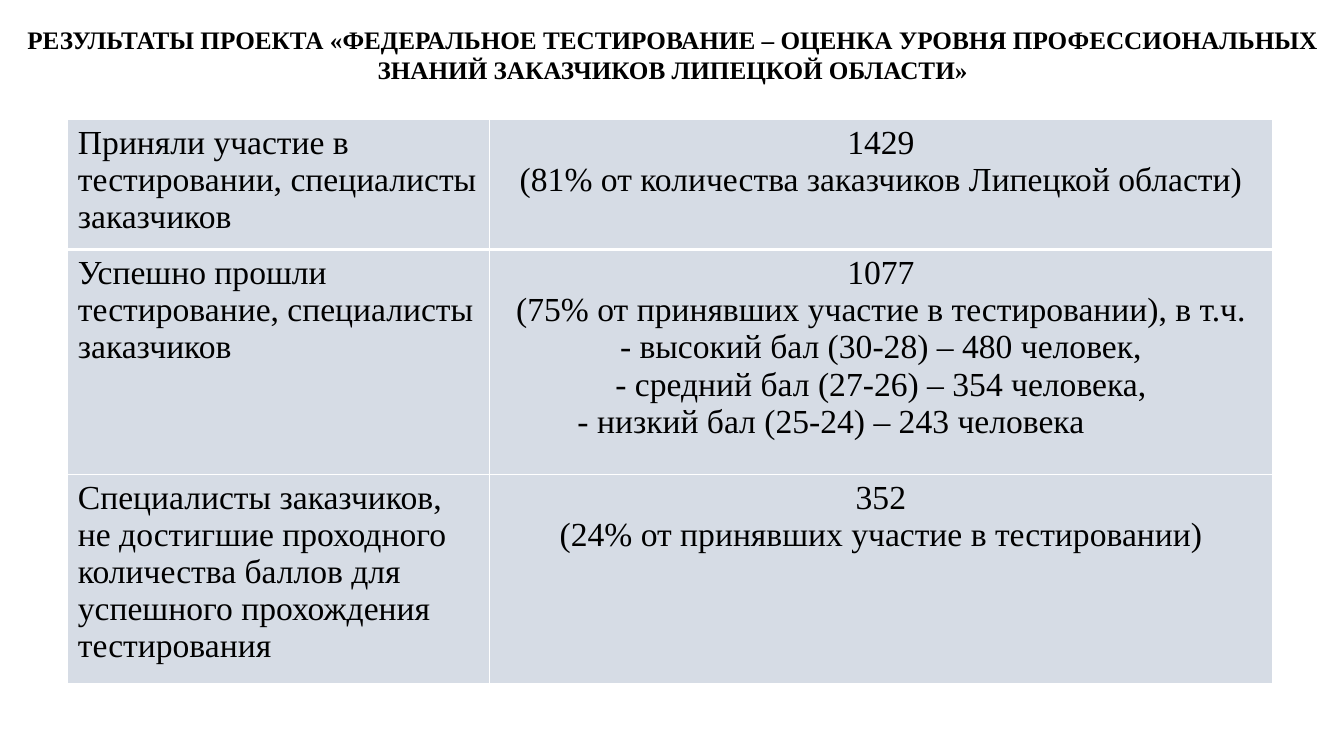
import pptx
import pptx.util
import pptx.dml.color
import pptx.enum.text
import pptx.oxml.ns
import lxml.etree

Cm, Pt = pptx.util.Cm, pptx.util.Pt
ALIGN = pptx.enum.text.PP_ALIGN
FONT = "Times New Roman"

TITLE = ("РЕЗУЛЬТАТЫ ПРОЕКТА «ФЕДЕРАЛЬНОЕ ТЕСТИРОВАНИЕ – ОЦЕНКА УРОВНЯ "
         "ПРОФЕССИОНАЛЬНЫХ ЗНАНИЙ ЗАКАЗЧИКОВ ЛИПЕЦКОЙ ОБЛАСТИ»")
RESULTS = [
    ("Приняли участие в тестировании, специалисты заказчиков",
     "1429\n(81% от количества заказчиков Липецкой области)"),
    ("Успешно прошли тестирование, специалисты заказчиков",
     "1077\n(75% от принявших участие в тестировании), в т.ч.\n"
     "- высокий бал (30-28) – 480 человек,\n"
     "- средний бал (27-26) – 354 человека,\n"
     "- низкий бал (25-24) – 243 человека"),
    ("Специалисты заказчиков, не достигшие проходного количества баллов "
     "для успешного прохождения тестирования",
     "352\n(24% от принявших участие в тестировании)"),
]
COL_WIDTHS = (10.62, 19.74)
ROW_HEIGHTS = (3.28, 5.66, 5.28)


def color(value):
    return pptx.dml.color.RGBColor.from_string(value)


def format_text(tf, size, align, bold=False):
    for p in tf.paragraphs:
        p.alignment = align
        for r in p.runs:
            r.font.name = FONT
            r.font.size = Pt(size)
            r.font.bold = bold
            r.font.color.rgb = color("000000")


def add_title(s, text):
    sp = s.shapes.title
    sp.left, sp.top, sp.width, sp.height = Cm(0), Cm(0.48), Cm(33.91), Cm(1.8)
    tf = sp.text_frame
    tf.text = text
    tf.word_wrap = True
    tf.auto_size = pptx.enum.text.MSO_AUTO_SIZE.NONE
    tf.vertical_anchor = pptx.enum.text.MSO_ANCHOR.TOP
    format_text(tf, 18, ALIGN.CENTER, bold=True)


def set_borders(cell, bottom, top):
    """Draw white borders; they come before the fill in the cell properties."""
    qn = pptx.oxml.ns.qn
    tc_pr = cell._tc.get_or_add_tcPr()
    sides = (("a:lnL", 1), ("a:lnR", 1), ("a:lnT", top), ("a:lnB", bottom))
    for i, (tag, width) in enumerate(sides):
        ln = lxml.etree.Element(qn(tag), w=str(Pt(width)))
        fill = lxml.etree.SubElement(ln, qn("a:solidFill"))
        lxml.etree.SubElement(fill, qn("a:srgbClr"), val="FFFFFF")
        tc_pr.insert(i, ln)


def add_results(s):
    table = s.shapes.add_table(len(RESULTS), len(COL_WIDTHS), Cm(1.71), Cm(3.01),
                               Cm(sum(COL_WIDTHS)), Cm(sum(ROW_HEIGHTS))).table
    table.first_row = table.horz_banding = False
    for column, width in zip(table.columns, COL_WIDTHS):
        column.width = Cm(width)
    for i, (row, texts) in enumerate(zip(table.rows, RESULTS)):
        row.height = Cm(ROW_HEIGHTS[i])
        for cell, text, align in zip(row.cells, texts, (ALIGN.LEFT, ALIGN.CENTER)):
            cell.text_frame.text = text
            format_text(cell.text_frame, 24, align)
            cell.fill.solid()
            cell.fill.fore_color.rgb = color("D6DCE5")
            # A thicker line separates the first row from the rest
            set_borders(cell, bottom=3 if i == 0 else 1, top=3 if i == 1 else 1)
    return table


def main():
    prs = pptx.Presentation()
    prs.slide_width, prs.slide_height = Cm(33.87), Cm(19.05)
    s = prs.slides.add_slide(prs.slide_layouts[5])
    add_title(s, TITLE)
    table = add_results(s)

    # The low-score line stands further left than the centred lines
    p = table.cell(1, 1).text_frame.paragraphs[-1]
    p.alignment = ALIGN.LEFT
    p._p.get_or_add_pPr().set("marL", str(Cm(1.97)))

    prs.save("out.pptx")


if __name__ == "__main__":
    main()
